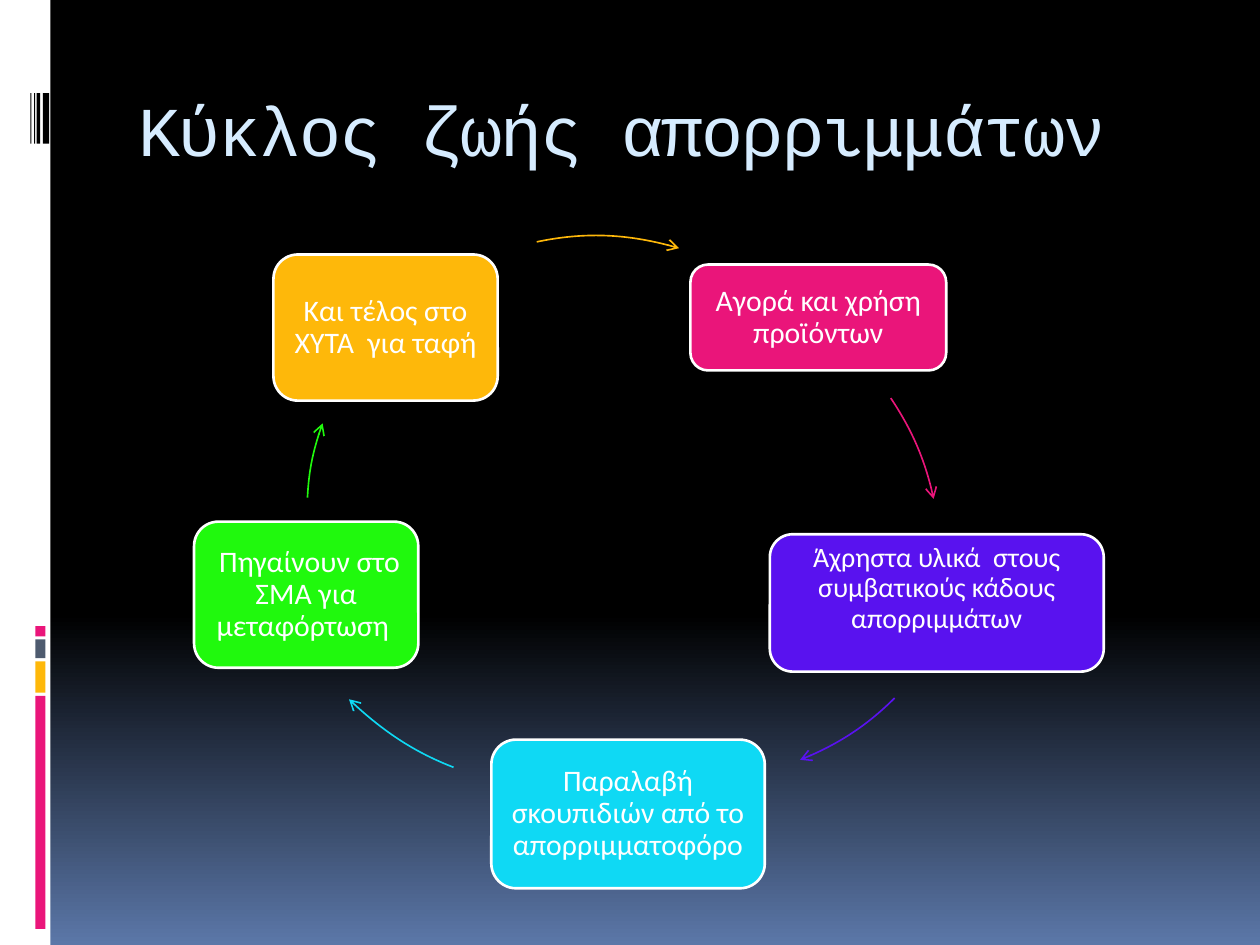
from dataclasses import dataclass

from lxml.etree import SubElement
from pptx import Presentation
from pptx.dml.color import RGBColor
from pptx.enum.shapes import MSO_SHAPE as Shape
from pptx.enum.text import MSO_ANCHOR as Anchor, PP_ALIGN as Align
from pptx.oxml.ns import qn
from pptx.util import Inches, Pt

CELL = Inches(0.1)  # the slide is a grid of 100 columns by 75 rows


@dataclass(frozen=True)
class Theme:
    white: str = "FFFFFF"
    black: str = "000000"
    dusk: str = "5B77A8"
    title: str = "D6ECFF"
    slate: str = "4E5B6F"
    pink: str = "EA157A"
    purple: str = "5912EF"
    cyan: str = "0FD9F4"
    green: str = "20F90D"
    amber: str = "FEB80A"
    title_font: str = "Courier New"
    body_font: str = "Calibri"
    title_size: float = 40
    body_size: float = 17
    small_size: float = 16
    border: float = 1.5
    arrow: float = 0.94


@dataclass(frozen=True)
class Box:
    x: float
    y: float
    w: float
    h: float

    def inner(self, x, y, w, h):
        return Box(self.x + x, self.y + y, w, h)

    def emu(self):
        return [round(v * CELL) for v in (self.x, self.y, self.w, self.h)]


T = Theme()

# text, colour, type size, node (column, row, columns, rows), arrow curve points
STEPS = [
    ("Αγορά και χρήση προϊόντων", T.pink, T.body_size, (39.8, 3, 20.3, 8.4),
     [(55.7, 13.6), (57.3, 16), (58.5, 18.7), (59.1, 21.6)]),
    ("Άχρηστα υλικά  στους συμβατικούς κάδους απορριμμάτων", T.purple,
     T.small_size, (46.1, 24.4, 26.5, 10.9),
     [(56, 37.4), (53.9, 39.5), (51.3, 41.2), (48.5, 42.3)]),
    ("Παραλαβή σκουπιδιών από το απορριμματοφόρο", T.cyan, T.body_size,
     (24, 40.7, 21.7, 11.8),
     [(21, 42.9), (17.9, 41.7), (15.1, 39.8), (12.7, 37.5)]),
    (" Πηγαίνουν στο ΣΜΑ για μεταφόρτωση ", T.green, T.body_size,
     (0.4, 23.4, 17.8, 11.6),
     [(9.4, 21.5), (9.5, 19.5), (9.9, 17.5), (10.6, 15.6)]),
    ("Και τέλος στο ΧΥΤΑ  για ταφή", T.amber, T.body_size,
     (6.7, 2.2, 17.8, 11.6),
     [(27.6, 1.2), (31.4, 0.4), (35.2, 0.6), (38.9, 1.7)]),
]


def rgb(code):
    return RGBColor.from_string(code)


def add_block(s, box, color, kind=Shape.RECTANGLE):
    sp = s.shapes.add_shape(kind, *box.emu())
    sp.shadow.inherit = False
    sp.fill.solid()
    sp.fill.fore_color.rgb = rgb(color)
    sp.line.fill.background()
    return sp


def style_run(r, font, size, color):
    r.font.name = font
    r.font.size = Pt(size)
    r.font.color.rgb = rgb(color)


def set_background(s):
    fill = s.background.fill
    fill.gradient()
    fill.gradient_angle = 270
    for stop, position, color in zip(fill.gradient_stops, (0.65, 1),
                                     (T.black, T.dusk)):
        stop.position = position
        stop.color.rgb = rgb(color)


def add_sidebar(s, box):
    add_block(s, box, T.white)
    y, gap = 49.7, 0.24
    for h, color in ((0.8, T.pink), (1.5, T.slate), (2.5, T.amber), (18.5, T.pink)):
        add_block(s, box.inner(2.8, y, 0.8, h), color)
        y += h + gap
    for x, w in ((2.4, 0.1), (2.7, 0.1), (2.9, 0.3), (3.4, 0.5)):
        add_block(s, box.inner(x, 7.4, w, 4), T.black)


def add_title(s, box):
    tf = s.shapes.add_textbox(*box.emu()).text_frame
    tf.word_wrap = True
    tf.vertical_anchor = Anchor.MIDDLE
    tf.margin_bottom = Inches(0.13)
    tf.text = "Κύκλος ζωής απορριμμάτων"
    r = tf.paragraphs[0].runs[0]
    style_run(r, T.title_font, T.title_size, T.title)
    r.font._element.set("spc", "-100")


def add_node(s, box, text, color, size):
    sp = add_block(s, box, color, Shape.ROUNDED_RECTANGLE)
    sp.line.color.rgb = rgb(T.white)
    sp.line.width = Pt(T.border)
    tf = sp.text_frame
    tf.word_wrap = True
    tf.vertical_anchor = Anchor.MIDDLE
    tf.margin_left = tf.margin_right = tf.margin_top = tf.margin_bottom = Inches(0.07)
    if size == T.small_size:  # the longest text sits high in its node
        tf.vertical_anchor = Anchor.TOP
        tf.margin_top = Inches(0.02)
    tf.text = text
    p = tf.paragraphs[0]
    p.alignment = Align.CENTER
    p.line_spacing = 0.9
    style_run(p.runs[0], T.body_font, size, T.white)


def add_curved_arrow(s, box, points, color):
    """Draw one Bézier curve (start, two controls, end) with an open head."""
    start, *rest = [box.inner(x, y, 0, 0).emu()[:2] for x, y in points]
    builder = s.shapes.build_freeform(*start)
    builder.add_line_segments(rest, close=False)
    sp = builder.convert_to_shape()
    sp.shadow.inherit = False
    sp.fill.background()
    sp.line.color.rgb = rgb(color)
    sp.line.width = Pt(T.arrow)
    outline = next(sp.element.iter(qn("a:path")))
    curve = SubElement(outline, qn("a:cubicBezTo"))
    for segment in outline.findall(qn("a:lnTo")):
        curve.append(segment[0])
        outline.remove(segment)
    ln = next(sp.element.iter(qn("a:ln")))
    SubElement(ln, qn("a:tailEnd"), type="arrow")


def add_cycle(s, box):
    for text, color, size, node, curve in STEPS:
        add_node(s, box.inner(*node), text, color, size)
        add_curved_arrow(s, box, curve, color)


def main():
    prs = Presentation()
    prs.slide_width, prs.slide_height = 100 * CELL, 75 * CELL
    s = prs.slides.add_slide(prs.slide_layouts[6])
    set_background(s)
    add_sidebar(s, Box(0, 0, 4, 75))
    add_title(s, Box(10, 5.6, 85, 10))
    add_cycle(s, Box(15, 18, 75, 54))
    prs.save("out.pptx")


if __name__ == "__main__":
    main()
